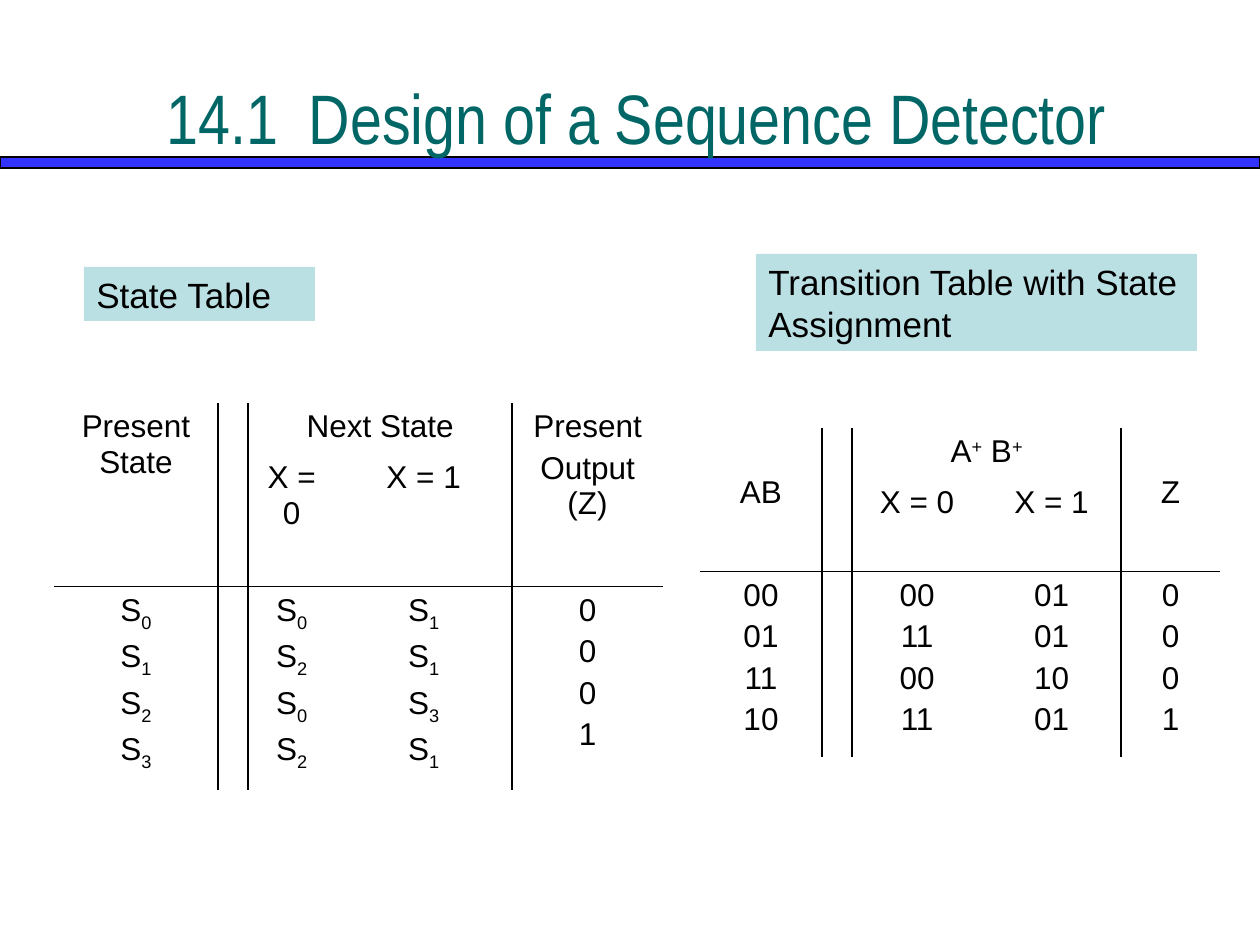
from lxml import etree
from pptx import Presentation
from pptx.dml.color import RGBColor
from pptx.enum.shapes import MSO_SHAPE
from pptx.enum.text import MSO_ANCHOR, PP_ALIGN
from pptx.oxml.ns import qn
from pptx.util import Pt

RECT = MSO_SHAPE.RECTANGLE
LEFT, CENTER = PP_ALIGN.LEFT, PP_ALIGN.CENTER
TOP, MIDDLE = MSO_ANCHOR.TOP, MSO_ANCHOR.MIDDLE

EMU_PER_PX = 914400 / 126
COLORS = {"bar": "3333FF", "title": "006666", "label": "BBE0E3", "ink": "000000"}
BASELINES = {"_": -25000, "^": 30000}
RULED_COLS, RULED_ROWS = {1, 2, 4}, {2}
SPANS = [(0, 0, 1, 0), (0, 2, 0, 3), (0, 4, 1, 4)]


def px(n):
    return round(n * EMU_PER_PX)


def rgb(name):
    return RGBColor.from_string(COLORS[name])


def split_scripts(text):
    """Yield (text, baseline); "_" lowers and "^" raises the next character."""
    plain, shift = "", None
    for ch in text:
        if shift:
            yield ch, shift
            shift = None
        elif ch in BASELINES:
            yield plain, None
            plain, shift = "", BASELINES[ch]
        else:
            plain += ch
    if plain:
        yield plain, None


class Deck:
    def __init__(self, width, height):
        self.prs = Presentation()
        self.prs.slide_width, self.prs.slide_height = px(width), px(height)
        self.s = self.prs.slides.add_slide(self.prs.slide_layouts[6])

    def add_lines(self, tf, lines, size=18, color="ink", font="Arial", align=CENTER):
        tf.word_wrap = True
        for i, line in enumerate(lines):
            p = tf.paragraphs[0] if i == 0 else tf.add_paragraph()
            p.alignment = align
            if i:
                p.space_before = Pt(size * 0.2)
            for text, baseline in split_scripts(line):
                r = p.add_run()
                r.text = text
                for key, value in {"size": Pt(size), "name": font}.items():
                    setattr(r.font, key, value)
                r.font.color.rgb = rgb(color)
                if baseline:
                    r._r.get_or_add_rPr().set("baseline", str(baseline))

    def rect(self, box, fill, line=None):
        sp = self.s.shapes.add_shape(RECT, *map(px, box))
        sp.shadow.inherit = False
        sp.fill.solid()
        sp.fill.fore_color.rgb = rgb(fill)
        if line:
            sp.line.color.rgb = rgb(line)
            sp.line.width = Pt(0.75)
        else:
            sp.line.fill.background()
        return sp

    def title(self, box, text):
        tf = self.s.shapes.add_textbox(*map(px, box)).text_frame
        tf.vertical_anchor = MIDDLE
        self.add_lines(tf, [text], 40, "title", "Arial Narrow")

    def label(self, box, text):
        tf = self.rect(box, "label").text_frame
        tf.vertical_anchor = TOP
        self.add_lines(tf, [text], 20, align=LEFT)

    def rule_cell(self, cell, row, col):
        """Draw the cell's ruled sides and clear the others."""
        cell.fill.background()
        sides = {
            "L": col in RULED_COLS,
            "R": col + cell.span_width in RULED_COLS,
            "T": row in RULED_ROWS,
            "B": row + cell.span_height in RULED_ROWS,
        }
        tcPr = cell._tc.get_or_add_tcPr()
        for i, (side, ruled) in enumerate(sides.items()):
            ln = etree.Element(qn(f"a:ln{side}"), w=str(Pt(1)))
            if ruled:
                fill = etree.SubElement(ln, qn("a:solidFill"))
                etree.SubElement(fill, qn("a:srgbClr"), val=COLORS["ink"])
            else:
                etree.SubElement(ln, qn("a:noFill"))
            tcPr.insert(i, ln)

    def table(self, left, top, widths, heights, texts, drops=()):
        """Add a ruled table; drops maps columns to header top margins."""
        box = (left, top, sum(widths), sum(heights))
        table = self.s.shapes.add_table(len(heights), len(widths), *map(px, box)).table
        table.first_row = table.horz_banding = False
        for column, width in zip(table.columns, widths):
            column.width = px(width)
        for row, height in zip(table.rows, heights):
            row.height = px(height)
        for r1, c1, r2, c2 in SPANS:
            table.cell(r1, c1).merge(table.cell(r2, c2))
        for r in range(len(heights)):
            for c in range(len(widths)):
                cell = table.cell(r, c)
                self.rule_cell(cell, r, c)
                if (r, c) in texts:
                    self.add_lines(cell.text_frame, texts[r, c].split("|"))
        for c, margin in dict(drops).items():
            table.cell(0, c).margin_top = px(margin)


def main():
    deck = Deck(1260, 945)
    deck.rect((0, 157, 1260, 11), "bar", "ink")
    deck.title((38, 38, 1197, 157), "14.1\t Design of a Sequence Detector")

    deck.label((84, 267, 231, 54), "State Table")
    deck.table(54, 403, [164, 30, 87, 177, 151], [51, 131, 204], {
        (0, 0): "Present State",
        (0, 2): "Next State",
        (0, 4): "Present|Output (Z)",
        (1, 2): "X = 0",
        (1, 3): "X = 1",
        (2, 0): "S_0|S_1|S_2|S_3",
        (2, 2): "S_0|S_2|S_0|S_2",
        (2, 3): "S_1|S_1|S_3|S_1",
        (2, 4): "0|0|0|1",
    })

    deck.table(700, 428, [122, 30, 130, 139, 99], [50, 93, 186], {
        (0, 0): "AB",
        (0, 2): "A^+ B^+",
        (0, 4): "Z",
        (1, 2): "X = 0",
        (1, 3): "X = 1",
        (2, 0): "00|01|11|10",
        (2, 2): "00|11|00|11",
        (2, 3): "01|01|10|01",
        (2, 4): "0|0|0|1",
    }, drops={0: 47, 4: 47})
    deck.label((756, 254, 441, 97), "Transition Table with State Assignment")

    deck.prs.save("out.pptx")


if __name__ == "__main__":
    main()
